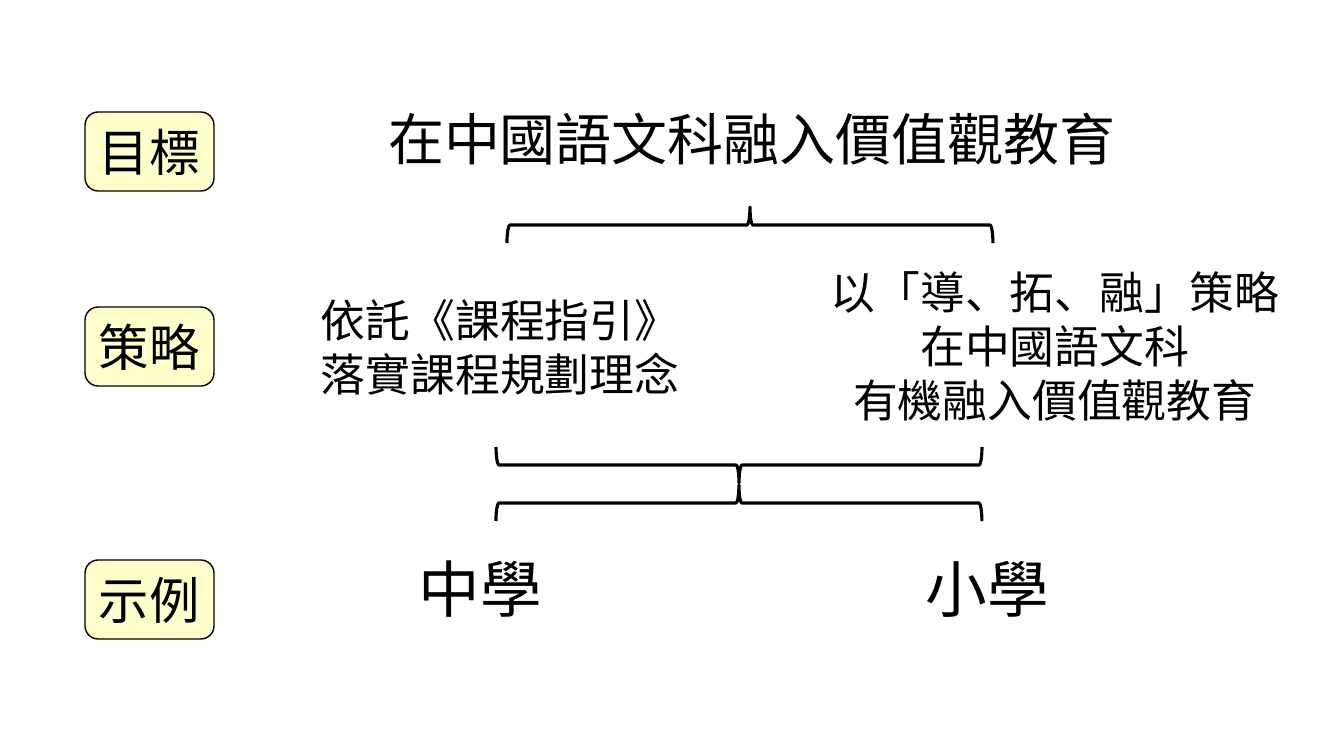
from dataclasses import dataclass

from pptx import Presentation
from pptx.dml.color import RGBColor
from pptx.enum.shapes import MSO_SHAPE
from pptx.enum.text import MSO_ANCHOR, MSO_AUTO_SIZE, PP_ALIGN
from pptx.util import Emu, Pt

ROUNDED = MSO_SHAPE.ROUNDED_RECTANGLE
BRACE = MSO_SHAPE.RIGHT_BRACE
TOP, MIDDLE = MSO_ANCHOR.TOP, MSO_ANCHOR.MIDDLE
LEFT, CENTER = PP_ALIGN.LEFT, PP_ALIGN.CENTER
GROW = MSO_AUTO_SIZE.SHAPE_TO_FIT_TEXT
TITLE_ONLY = 5
EMU_PER_PX = 914400 / 100.8
OPENS_DOWN, OPENS_UP = 270, 90


@dataclass(frozen=True)
class Theme:
    """Colours, font and type sizes of the slide."""
    ink: RGBColor = RGBColor(0, 0, 0)
    label_fill: RGBColor = RGBColor(0xFF, 0xFF, 0xCC)
    font: str = "Calibri"
    title: int = 40
    strategy: int = 32
    school: int = 44
    label: int = 36
    label_line: float = 1
    brace_line: float = 2.25


THEME = Theme()


def px(*lengths):
    """Turn pixel lengths into EMU."""
    return [Emu(round(length * EMU_PER_PX)) for length in lengths]


def write(shape, text, size, align=LEFT, anchor=TOP, wrap=False):
    """Fill a shape with one formatted paragraph per line of text."""
    frame = shape.text_frame
    frame.text = text
    frame.word_wrap = wrap
    frame.auto_size = GROW
    frame.vertical_anchor = anchor
    for paragraph in frame.paragraphs:
        paragraph.alignment = align
        paragraph.font.name = THEME.font
        paragraph.font.size = Pt(size)
        paragraph.font.color.rgb = THEME.ink


def add_title(slide, text, box):
    """Place the goal in the title placeholder."""
    title = slide.shapes.title
    title.left, title.top, title.width, title.height = px(*box)
    write(title, text, THEME.title)


def add_text(slide, text, box, size, **text_format):
    """Add a text box."""
    write(slide.shapes.add_textbox(*px(*box)), text, size, **text_format)


def add_outlined(slide, kind, box, line_width):
    """Add a preset shape with a plain outline and no shadow."""
    shape = slide.shapes.add_shape(kind, *px(*box))
    shape.shadow.inherit = False
    shape.line.color.rgb = THEME.ink
    shape.line.width = Pt(line_width)
    return shape


def add_label(slide, text, top):
    """Add a row label in the left column."""
    label = add_outlined(slide, ROUNDED, (85, top, 129, 79), THEME.label_line)
    label.fill.solid()
    label.fill.fore_color.rgb = THEME.label_fill
    write(label, text, THEME.label, anchor=MIDDLE)


def add_brace(slide, center_x, center_y, rotation):
    """Add a brace turned to lie flat around a centre point."""
    depth, span = 36, 486
    box = (center_x - depth // 2, center_y - span // 2, depth, span)
    brace = add_outlined(slide, BRACE, box, THEME.brace_line)
    brace.fill.background()
    brace.rotation = rotation


def main():
    """Build and save the slide."""
    presentation = Presentation()
    presentation.slide_width, presentation.slide_height = px(1344, 756)
    slide = presentation.slides.add_slide(presentation.slide_layouts[TITLE_ONLY])

    add_title(slide, "在中國語文科融入價值觀教育", (378, 99, 755, 78))
    add_text(slide, "依託《課程指引》\n落實課程規劃理念",
             (311, 288, 427, 119), THEME.strategy)
    add_text(slide, "以「導、拓、融」策略\n在中國語文科\n有機融入價值觀教育",
             (782, 260, 546, 173), THEME.strategy, align=CENTER, wrap=True)
    for school, left in (("中學", 409), ("小學", 916)):
        add_text(slide, school, (left, 546, 145, 85), THEME.school)
    for label, top in (("目標", 112), ("策略", 307), ("示例", 560)):
        add_label(slide, label, top)
    for center_x, center_y, rotation in ((750, 225, OPENS_DOWN),
                                         (739, 503, OPENS_DOWN),
                                         (739, 465, OPENS_UP)):
        add_brace(slide, center_x, center_y, rotation)

    presentation.save("out.pptx")


if __name__ == "__main__":
    main()
